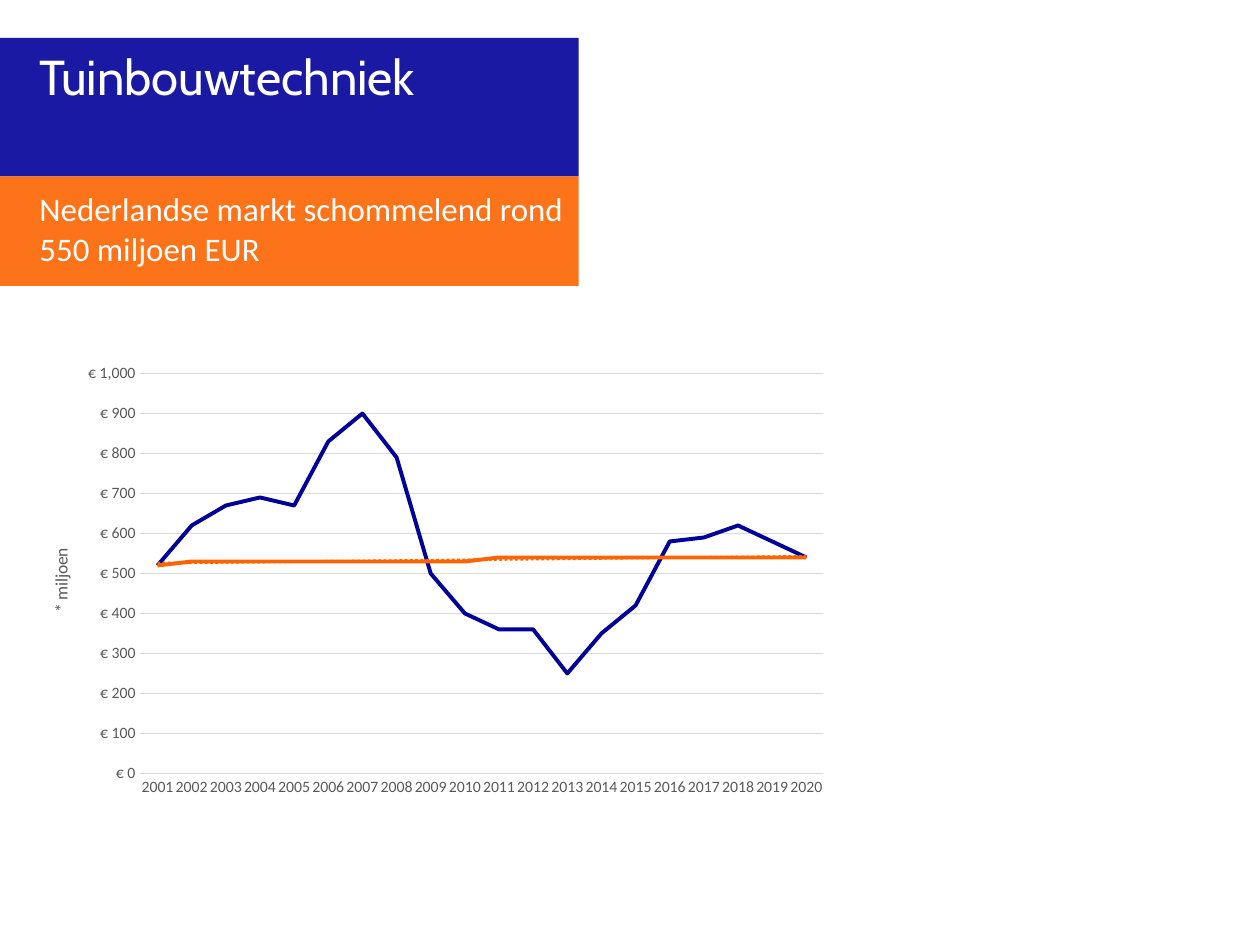
from dataclasses import dataclass

from lxml import etree
from pptx import Presentation
from pptx.chart.data import CategoryChartData
from pptx.dml.color import RGBColor
from pptx.enum import chart as ch, shapes, text
from pptx.oxml import parse_xml
from pptx.oxml.ns import nsdecls, qn
from pptx.util import Pt

COLORS = {"navy": "000099", "orange": "FD6400", "white": "FFFFFF",
          "grid": "D9D9D9", "label": "595959"}
BODY_FONT = "Calibri"


@dataclass
class Banner:
    lines: list[str]
    top: float
    height: float
    fill: str
    font: str
    size: float
    inset_top: float
    spacing: float | None = None


@dataclass
class Line:
    name: str
    color: str
    values: list[int]
    trend: bool = False


TITLE = Banner(["Tuinbouwtechniek"], 21.6, 79.2, "navy", "Cabin", 28, 8.6, 30)
SUBTITLE = Banner(["Nederlandse markt schommelend rond", "550 miljoen EUR"],
                  100.8, 62.6, "orange", BODY_FONT, 18.8, 7.2)
YEARS = [str(year) for year in range(2001, 2021)]
LINES = [
    Line("Series 1", "navy", [520, 620, 670, 690, 670, 830, 900, 790, 500, 400,
                              360, 360, 250, 350, 420, 580, 590, 620, 580, 540]),
    Line("Series 2", "orange", [520] + [530] * 9 + [540] * 10, trend=True),
]


def rgb(name: str) -> RGBColor:
    return RGBColor.from_string(COLORS[name])


def fill_banner(sp, banner: Banner) -> None:
    """Place a banner, tint it at 90 % opacity and write its lines."""
    sp.left, sp.top = Pt(0), Pt(banner.top)
    sp.width, sp.height = Pt(330.7), Pt(banner.height)
    sp.fill.solid()
    sp.fill.fore_color.rgb = rgb(banner.fill)
    color = sp.fill._xPr.find(qn("a:solidFill"))[0]
    etree.SubElement(color, qn("a:alpha"), val="90000")
    sp.line.fill.background()

    tf = sp.text_frame
    tf.word_wrap = True
    tf.auto_size = text.MSO_AUTO_SIZE.NONE
    tf.vertical_anchor = text.MSO_ANCHOR.TOP
    tf.margin_left, tf.margin_right = Pt(22.6), Pt(7.2)
    tf.margin_top, tf.margin_bottom = Pt(banner.inset_top), Pt(6)
    for i, line in enumerate(banner.lines):
        p = tf.paragraphs[0] if i == 0 else tf.add_paragraph()
        p.alignment = text.PP_ALIGN.LEFT
        if banner.spacing:
            p.line_spacing = Pt(banner.spacing)
        r = p.add_run()
        r.text = line
        style_font(r.font, banner.size, "white", banner.font)


def style_font(font, size: float, color: str, name: str = BODY_FONT) -> None:
    font.name, font.size, font.bold = name, Pt(size), False
    font.color.rgb = rgb(color)


def style_line(line, color: str, width: float) -> None:
    line.color.rgb = rgb(color)
    line.width = Pt(width)


def manual_layout(x: float, y: float, size: tuple[float, float] | None = None):
    """Return a c:layout; a size fixes the inner plot area."""
    target = '<c:layoutTarget val="inner"/>' if size else ""
    extent = f'<c:w val="{size[0]}"/><c:h val="{size[1]}"/>' if size else ""
    return parse_xml(
        f'<c:layout {nsdecls("c")}><c:manualLayout>{target}'
        '<c:xMode val="edge"/><c:yMode val="edge"/>'
        f'<c:x val="{x}"/><c:y val="{y}"/>{extent}</c:manualLayout></c:layout>')


def add_trend(series, color: str) -> None:
    trend = parse_xml(
        f'<c:trendline {nsdecls("c", "a")}><c:spPr><a:ln w="{Pt(1.5)}">'
        f'<a:solidFill><a:srgbClr val="{COLORS[color]}"/></a:solidFill>'
        '<a:prstDash val="sysDot"/></a:ln></c:spPr>'
        '<c:trendlineType val="linear"/><c:dispRSqr val="0"/>'
        '<c:dispEq val="0"/></c:trendline>')
    series._element.find(qn("c:cat")).addprevious(trend)


def add_market_chart(s) -> None:
    data = CategoryChartData()
    data.categories = YEARS
    for line in LINES:
        data.add_series(line.name, line.values)
    chart = s.shapes.add_chart(ch.XL_CHART_TYPE.LINE, Pt(12.2), Pt(190),
                               Pt(479.5), Pt(289.4), data).chart
    chart.has_legend = False
    chart.has_title = False
    chart.font.name, chart.font.size = BODY_FONT, Pt(10)

    # Plot area
    plot_area = chart._chartSpace.chart.plotArea
    for old in plot_area.findall(qn("c:layout")):
        plot_area.remove(old)
    plot_area.insert(0, manual_layout(0.142, 0.081, (0.814, 0.79)))

    # Axes
    for axis in (chart.category_axis, chart.value_axis):
        axis.major_tick_mark = axis.minor_tick_mark = ch.XL_TICK_MARK.NONE
        style_font(axis.tick_labels.font, 9, "label")
    style_line(chart.category_axis.format.line, "grid", 0.75)
    value = chart.value_axis
    value.minimum_scale, value.maximum_scale, value.major_unit = 0, 1000, 100
    value.format.line.fill.background()
    style_line(value.major_gridlines.format.line, "grid", 0.75)
    value.tick_labels.number_format = '"€"\\ #,##0'
    value.tick_labels.number_format_is_linked = False

    # Value axis title
    title = value.axis_title
    r = title.text_frame.paragraphs[0].add_run()
    r.text = "* miljoen"
    style_font(r.font, 10, "label")
    body = title.text_frame._txBody.find(qn("a:bodyPr"))
    body.set("rot", "-5400000")
    body.set("vert", "horz")
    for old in title._element.findall(qn("c:layout")):
        title._element.remove(old)
    title._element.find(qn("c:tx")).addnext(manual_layout(0.03, 0.42))

    # Series
    for series, line in zip(chart.plots[0].series, LINES):
        series.smooth = False
        series.marker.style = ch.XL_MARKER_STYLE.NONE
        style_line(series.format.line, line.color, 2.25)
        if line.trend:
            add_trend(series, line.color)


def main() -> None:
    prs = Presentation()
    prs.slide_width, prs.slide_height = Pt(720), Pt(540)
    s = prs.slides.add_slide(prs.slide_layouts[5])

    # Banners
    fill_banner(s.shapes.title, TITLE)
    sp = s.shapes.add_shape(shapes.MSO_SHAPE.RECTANGLE, 0, 0, Pt(1), Pt(1))
    sp.shadow.inherit = False
    fill_banner(sp, SUBTITLE)

    # Market size per year
    add_market_chart(s)
    prs.save("out.pptx")


if __name__ == "__main__":
    main()
